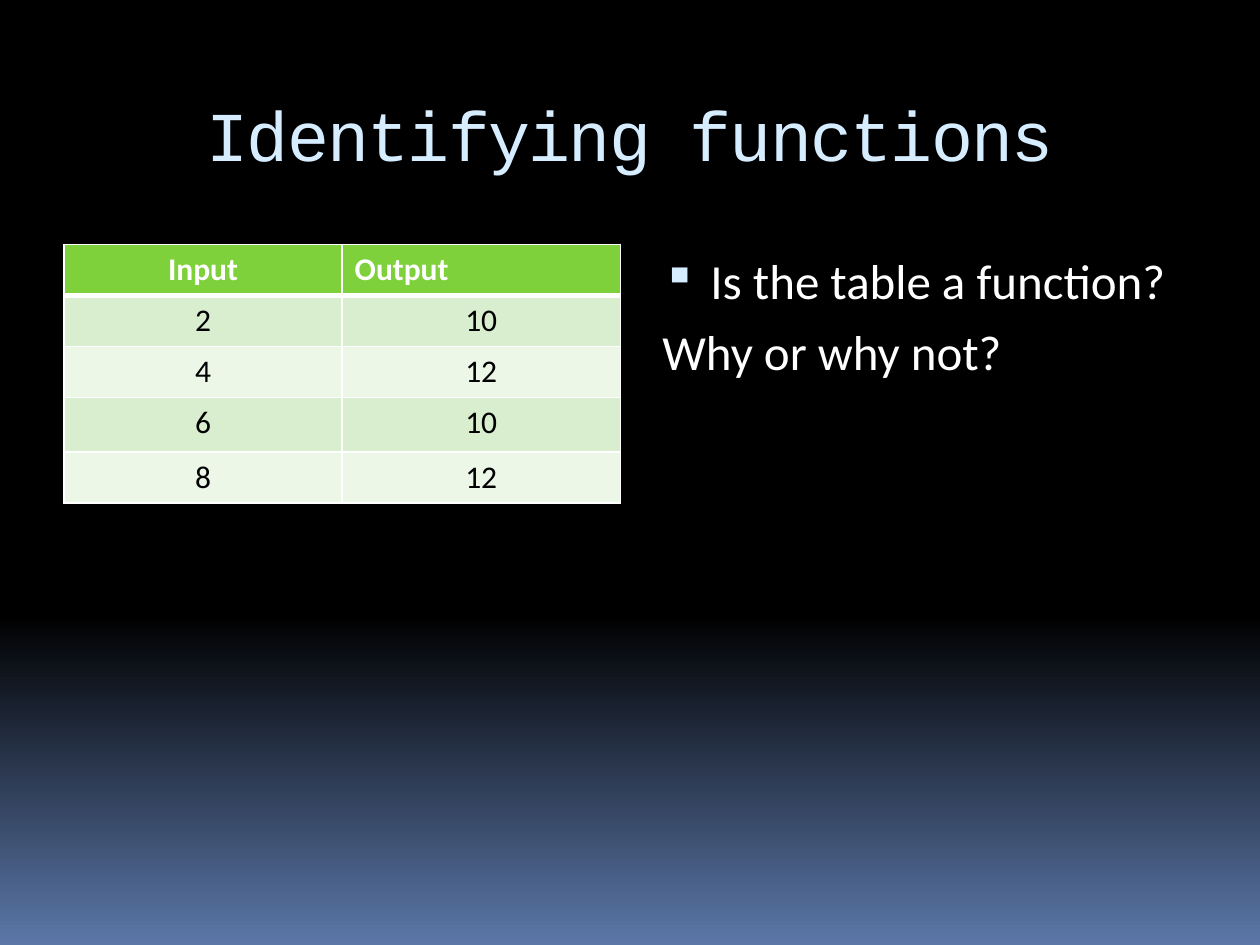
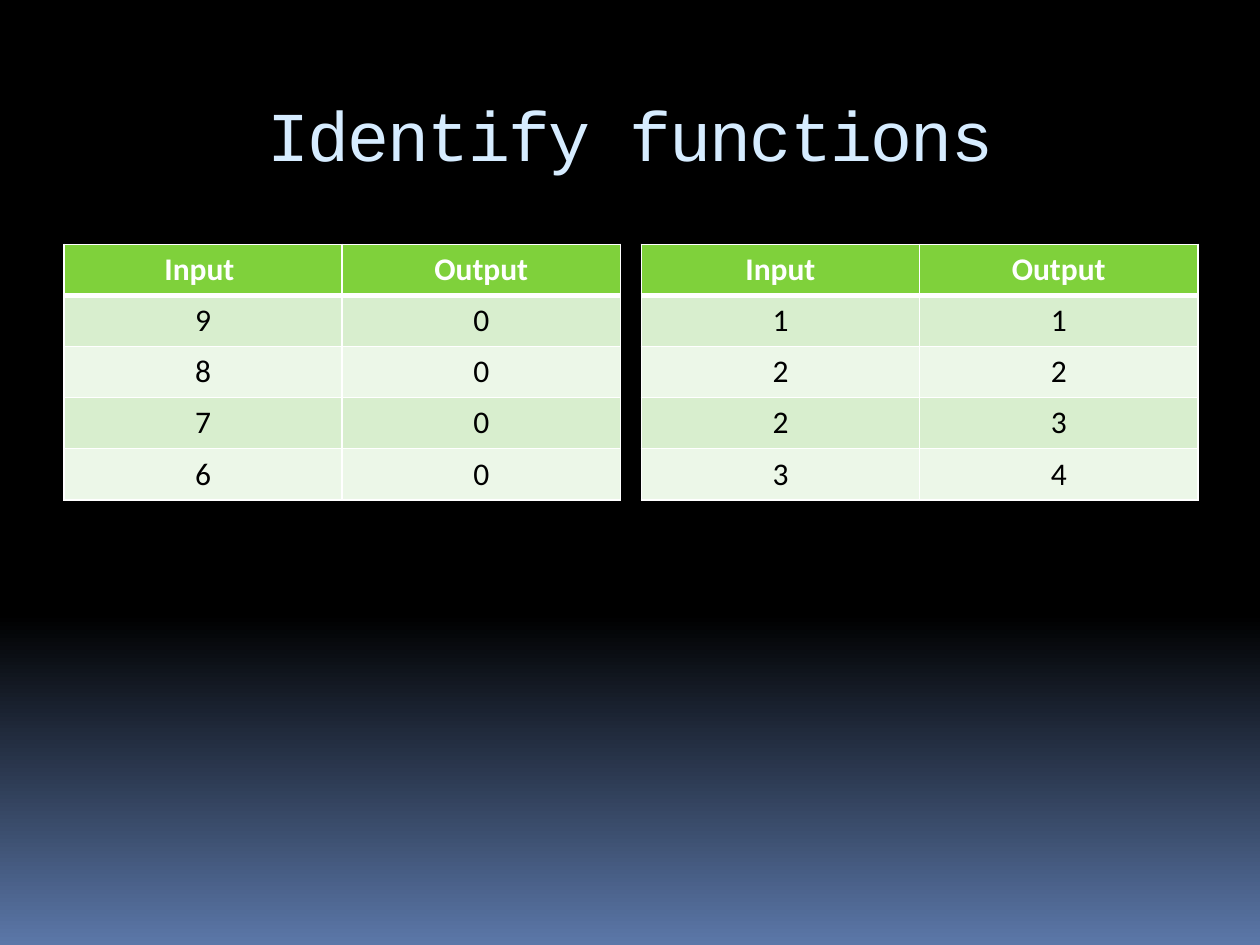
from copy import deepcopy

from pptx import Presentation
from pptx import oxml
from pptx import util as u
from pptx.dml import color
from pptx.enum import text
from pptx.oxml import ns

COLOURS = {
    "night": "000000",
    "dusk": "5B77A8",
    "title": "D6ECFF",
    "white": "FFFFFF",
    "black": "000000",
    "header": "7FD13B",
    "odd": "D8EECE",
    "even": "ECF7E8",
}
LEFT, RIGHT, TOP = 36.5, 366.5, 139.6
WIDTH = 318
ROW = 29.2
CENTER, START = text.PP_ALIGN.CENTER, text.PP_ALIGN.LEFT
TITLE = {"name": "Courier New", "size": u.Pt(40), "bold": False}
BODY = {"name": "Calibri", "size": u.Pt(28), "bold": False}
HEAD = {"name": "Calibri", "size": u.Pt(18), "bold": True}
VALUE = {"name": "Calibri", "size": u.Pt(18), "bold": False}


def rgb(name):
    return color.RGBColor.from_string(COLOURS[name])


def element(xml):
    return oxml.parse_xml(xml.replace(">", f" {ns.nsdecls('a')}>", 1))


class Lesson:
    def __init__(self):
        self.deck = Presentation()
        self.deck.slide_width, self.deck.slide_height = u.Pt(720), u.Pt(540)
        self.page = None
        self.paint_background()

    def paint_background(self):
        master = self.deck.slide_master
        fill = master.background.fill
        fill.gradient()
        fill.gradient_angle = 270
        stops = next(master.element.iter(ns.qn("a:gsLst")))
        stops.insert(1, deepcopy(stops[0]))
        scale = ((0, "night"), (0.65, "night"), (1, "dusk"))
        for stop, (position, name) in zip(fill.gradient_stops, scale):
            stop.position = position
            stop.color.rgb = rgb(name)

    def add_words(self, para, words, style, colour, align=START):
        para.alignment = align
        span = para.add_run()
        span.text = words
        for key, value in style.items():
            setattr(span.font, key, value)
        span.font.color.rgb = rgb(colour)
        return span

    def add_page(self, title):
        self.page = self.deck.slides.add_slide(self.deck.slide_layouts[5])
        box = self.page.shapes.title
        place = {"left": 36, "top": 40.3, "width": 648, "height": 72}
        for key, value in place.items():
            setattr(box, key, u.Pt(value))
        box.text_frame.vertical_anchor = text.MSO_ANCHOR.MIDDLE
        para = box.text_frame.paragraphs[0]
        span = self.add_words(para, title, TITLE, "title", CENTER)
        span._r.get_or_add_rPr().set("spc", "-100")

    def add_table(self, left, rows, heights=None, head_aligns=(CENTER, CENTER)):
        heights = heights or [ROW] * len(rows)
        frame = self.page.shapes.add_table(
            len(rows), 2, u.Pt(left), u.Pt(TOP), u.Pt(WIDTH), u.Pt(sum(heights))
        )
        table = frame.table
        for index, values in enumerate(rows):
            table.rows[index].height = u.Pt(heights[index])
            for column, value in enumerate(values):
                cell = table.cell(index, column)
                para = cell.text_frame.paragraphs[0]
                cell.fill.solid()
                if index == 0:
                    cell.fill.fore_color.rgb = rgb("header")
                    self.add_words(para, value, HEAD, "white", head_aligns[column])
                else:
                    cell.fill.fore_color.rgb = rgb("odd" if index % 2 else "even")
                    self.add_words(para, str(value), VALUE, "black", CENTER)
                self.add_borders(cell, 3 if index == 1 else 1, 3 if index == 0 else 1)

    def add_borders(self, cell, top, bottom):
        properties = cell._tc.get_or_add_tcPr()
        sides = {"lnL": 1, "lnR": 1, "lnT": top, "lnB": bottom}
        for place, (side, width) in enumerate(sides.items()):
            line = element(
                f'<a:{side} w="{u.Pt(width)}"><a:solidFill>'
                f'<a:srgbClr val="{COLOURS["white"]}"/></a:solidFill></a:{side}>'
            )
            properties.insert(place, line)

    def add_questions(self, bulleted, plain):
        box = self.page.shapes.add_textbox(
            u.Pt(RIGHT), u.Pt(TOP), u.Pt(WIDTH), u.Pt(356.4)
        )
        frame = box.text_frame
        frame.word_wrap = True
        first, second = frame.paragraphs[0], frame.add_paragraph()
        for para, words, margin, indent in (
            (first, bulleted, 32.4, -27.4),
            (second, plain, 5, 0),
        ):
            self.add_words(para, words, BODY, "white")
            para.space_before = u.Pt(7)
            properties = para._p.get_or_add_pPr()
            properties.set("marL", str(u.Pt(margin)))
            properties.set("indent", str(u.Pt(indent)))
        bullet = (
            f'<a:buClr><a:srgbClr val="{COLOURS["title"]}"/></a:buClr>',
            '<a:buSzPct val="95000"></a:buSzPct>',
            '<a:buChar char="▪"></a:buChar>',
        )
        for part in bullet:
            first._p.get_or_add_pPr().append(element(part))


def main():
    lesson = Lesson()

    lesson.add_page("Identifying functions")
    lesson.add_table(
        LEFT,
        [("Input", "Output"), (2, 10), (4, 12), (6, 10), (8, 12)],
        heights=[ROW, ROW, ROW, 31, ROW],
        head_aligns=(CENTER, START),
    )
    lesson.add_questions("Is the table a function?", "Why or why not?")

    lesson.add_page("Identify functions")
    lesson.add_table(LEFT, [("Input ", "Output"), (9, 0), (8, 0), (7, 0), (6, 0)])
    lesson.add_table(RIGHT, [("Input", "Output"), (1, 1), (2, 2), (2, 3), (3, 4)])

    lesson.deck.save("out.pptx")


if __name__ == "__main__":
    main()
